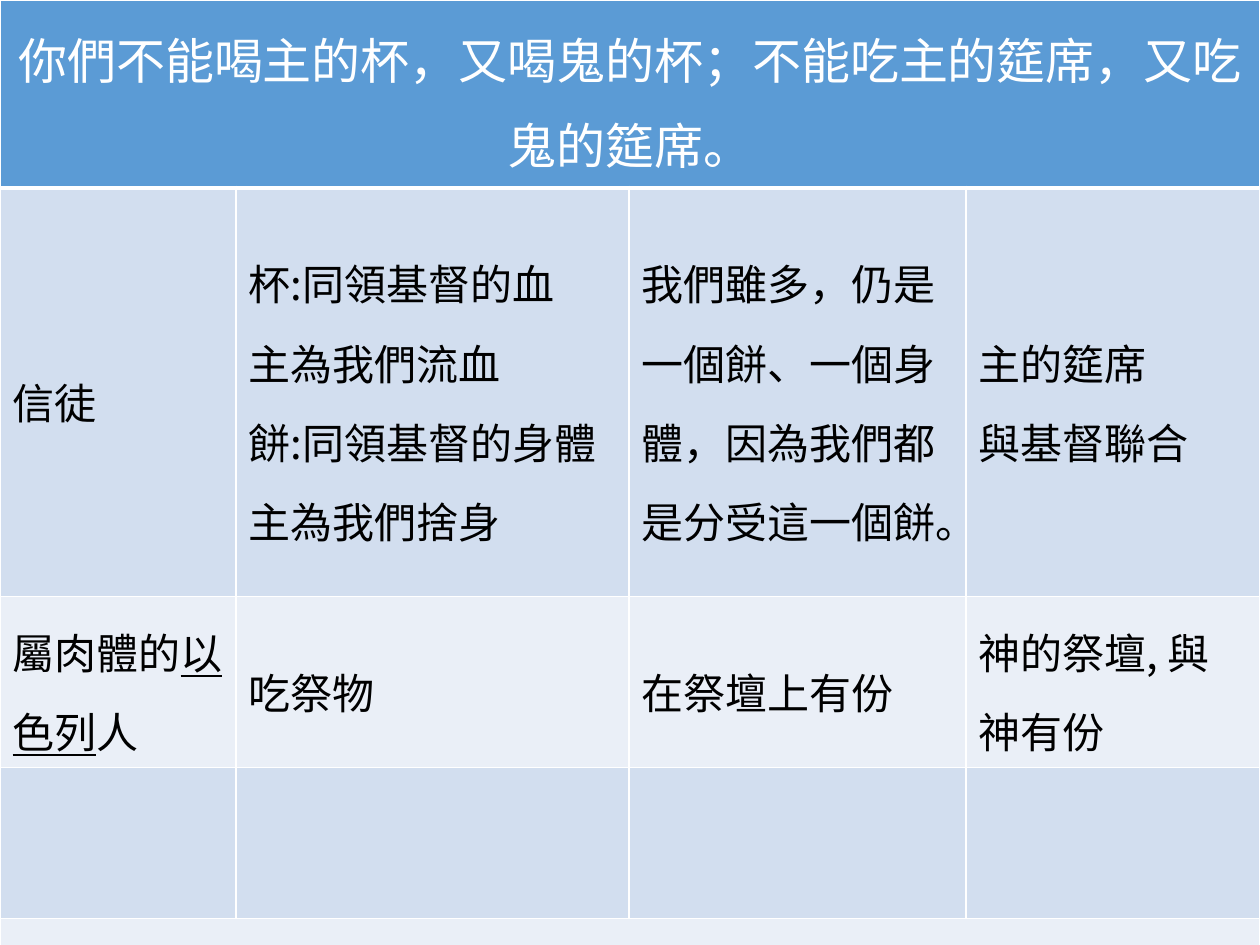
from lxml import etree
from pptx import Presentation
from pptx.dml.color import RGBColor
from pptx.enum.text import MSO_ANCHOR, PP_ALIGN
from pptx.oxml.ns import qn
from pptx.util import Emu, Pt

PX = 914400 // 126
MIDDLE = MSO_ANCHOR.MIDDLE
LEFT, CENTER = PP_ALIGN.LEFT, PP_ALIGN.CENTER

FONT = "Noto Sans CJK SC"
WHITE, BLACK = "FFFFFF", "000000"
HEADER_FILL, BANDS = "5B9BD5", ("D2DEEF", "EAEFF7")
HEADER_STYLE = {"size": 28, "color": WHITE, "spacing": 1.2, "align": CENTER}
BODY_STYLE = {"size": 24, "color": BLACK, "spacing": 1.3, "align": LEFT}

COLUMN_WIDTHS = (236, 393, 337, 294)
ROW_HEIGHTS = (188, 300, 144, 151, 162)
MERGED_ROWS = (0, 4)

# Each cell is a list of paragraphs; a tuple splits a paragraph into runs,
# of which every second one is underlined.
VERSE = ["你們不能喝主的杯，又喝鬼的杯；不能吃主的筵席，又吃鬼的筵席。"]
BELIEVERS = [
    ["信徒"],
    ["杯:同領基督的血", "主為我們流血", "餅:同領基督的身體", "主為我們捨身"],
    ["我們雖多，仍是一個餅、一個身體，因為我們都是分受這一個餅。"],
    ["主的筵席", "與基督聯合"],
]
ISRAELITES = [
    [("屬肉體的", "以色列", "人")],
    ["吃祭物"],
    ["在祭壇上有份"],
    ["神的祭壇, 與神有份"],
]
CONTENT = [[VERSE], BELIEVERS, ISRAELITES]


def px(length):
    return Emu(length * PX)


def rgb(color):
    return RGBColor.from_string(color)


def add_run(paragraph, text, style, underlined):
    run = paragraph.add_run()
    run.text = text
    formats = {"name": FONT, "size": Pt(style["size"])}
    if underlined:
        formats["underline"] = True
    for attribute, value in formats.items():
        setattr(run.font, attribute, value)
    run.font.color.rgb = rgb(style["color"])
    east_asian = etree.Element(qn("a:ea"), typeface=FONT)
    run.font._element.find(qn("a:latin")).addnext(east_asian)


def write_cell(cell, paragraphs, style):
    frame = cell.text_frame
    for index, content in enumerate(paragraphs):
        paragraph = frame.add_paragraph() if index else frame.paragraphs[0]
        paragraph.alignment = style["align"]
        paragraph.line_spacing = style["spacing"]
        runs = (content,) if isinstance(content, str) else content
        for position, text in enumerate(runs):
            add_run(paragraph, text, style, position % 2 == 1)


def set_borders(cell, widths):
    """Draw white borders; they must come before the fill in the cell's XML."""
    properties = cell._tc.get_or_add_tcPr()
    for index, (side, width) in enumerate(widths.items()):
        line = etree.Element(qn(f"a:ln{side}"), w=str(Pt(width)))
        fill = etree.SubElement(line, qn("a:solidFill"))
        etree.SubElement(fill, qn("a:srgbClr"), val=WHITE)
        properties.insert(index, line)


def format_cell(cell, row):
    cell.vertical_anchor = MIDDLE
    cell.fill.solid()
    cell.fill.fore_color.rgb = rgb(BANDS[(row - 1) % 2] if row else HEADER_FILL)
    set_borders(cell, {
        "L": 1,
        "R": 1,
        "T": 3 if row == 1 else 1,
        "B": 3 if row == 0 else 1,
    })


def add_comparison_table(slide):
    row_count, column_count = len(ROW_HEIGHTS), len(COLUMN_WIDTHS)
    table = slide.shapes.add_table(
        row_count, column_count, 0, 0,
        px(sum(COLUMN_WIDTHS)), px(sum(ROW_HEIGHTS)),
    ).table

    # Grid
    for column, width in zip(table.columns, COLUMN_WIDTHS):
        column.width = px(width)
    for row, height in zip(table.rows, ROW_HEIGHTS):
        row.height = px(height)
    for row in range(row_count):
        for column in range(column_count):
            format_cell(table.cell(row, column), row)
    for row in MERGED_ROWS:
        table.cell(row, 0).merge(table.cell(row, column_count - 1))

    # Wording
    for row, cells in enumerate(CONTENT):
        style = BODY_STYLE if row else HEADER_STYLE
        for column, paragraphs in enumerate(cells):
            write_cell(table.cell(row, column), paragraphs, style)


def main():
    presentation = Presentation()
    presentation.slide_width = px(1260)
    presentation.slide_height = px(945)
    slide = presentation.slides.add_slide(presentation.slide_layouts[6])
    add_comparison_table(slide)
    presentation.save("out.pptx")


if __name__ == "__main__":
    main()
